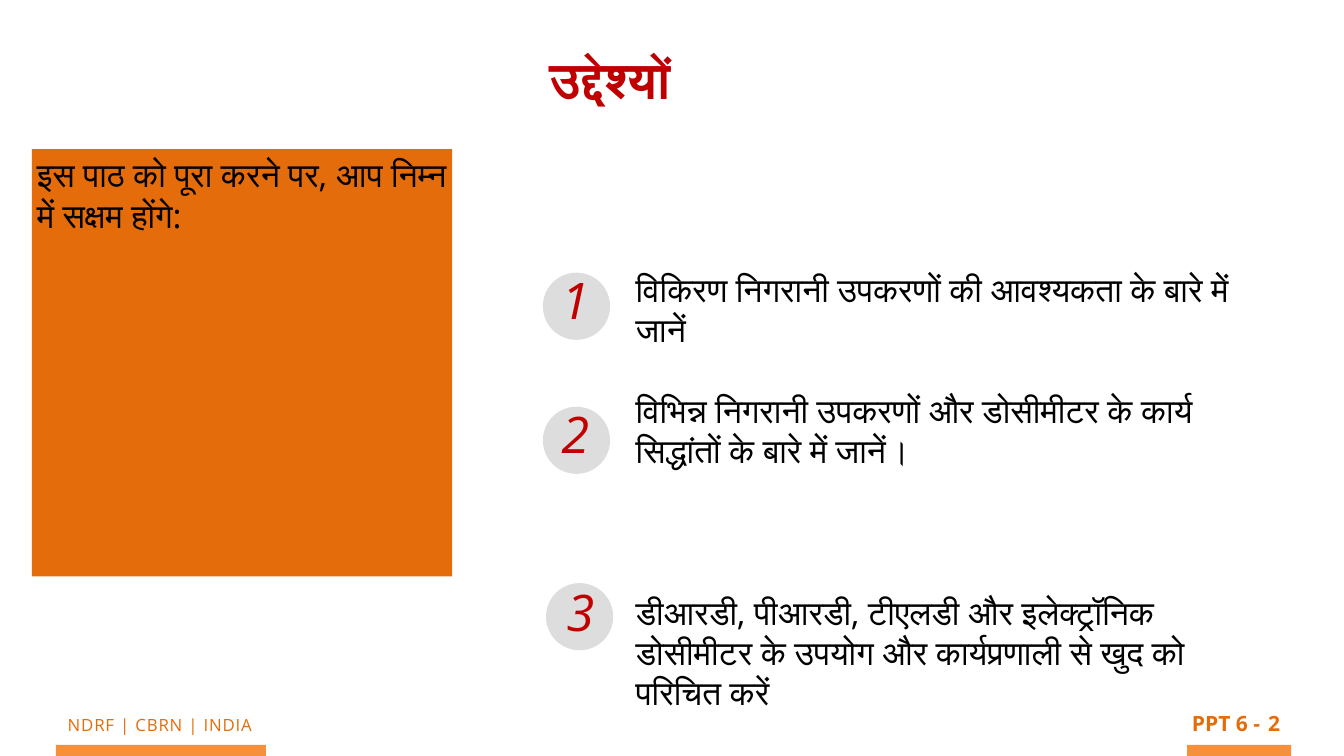
"""Build the lesson objectives slide with three numbered goals."""
from pptx import Presentation
from pptx.dml.color import RGBColor
from pptx.enum.shapes import MSO_SHAPE
from pptx.enum.text import MSO_ANCHOR, MSO_AUTO_SIZE, PP_ALIGN
from pptx.util import Pt

COLORS = {
    "orange": "E46C0A",
    "bar": "F7903B",
    "red": "C00000",
    "disc": "DDDDDD",
    "black": "000000",
}
FONT = "Open Sans"


def add_filled(shapes, kind, left, top, width, height, color):
    shape = shapes.add_shape(kind, Pt(left), Pt(top), Pt(width), Pt(height))
    shape.shadow.inherit = False
    shape.fill.solid()
    shape.fill.fore_color.rgb = RGBColor.from_string(COLORS[color])
    shape.line.fill.background()
    return shape


def write(box, texts, size, color, align=PP_ALIGN.LEFT, bold=False,
          italic=False, gaps=(0,), inset=6.5, wrap=True):
    frame = box.text_frame
    frame.word_wrap = wrap
    frame.auto_size = MSO_AUTO_SIZE.NONE
    frame.vertical_anchor = MSO_ANCHOR.TOP
    frame.margin_left = frame.margin_right = Pt(inset)
    frame.margin_top = frame.margin_bottom = Pt(inset)
    for index, (text, gap) in enumerate(zip(texts, gaps)):
        para = frame.add_paragraph() if index else frame.paragraphs[0]
        para.alignment = align
        para.space_before = Pt(gap)
        span = para.add_run()
        span.text = text
        span.font.name = FONT
        span.font.size = Pt(size)
        span.font.bold = bold
        span.font.italic = italic
        span.font.color.rgb = RGBColor.from_string(COLORS[color])
    return span


deck = Presentation()
deck.slide_width = Pt(1920)
deck.slide_height = Pt(1080)
page = deck.slides.add_slide(deck.slide_layouts[5])
shapes = page.shapes

title = shapes.title
title.left, title.top, title.width, title.height = Pt(682), Pt(62), Pt(379.5), Pt(99.5)
write(title, ["उद्देश्यों"], 72, "red", PP_ALIGN.CENTER, bold=True)

for left, width in [(80, 300), (1696, 148.5)]:
    add_filled(shapes, MSO_SHAPE.RECTANGLE, left, 1064, width, 16, "bar")

footer = shapes.add_textbox(Pt(45.5), Pt(1014), Pt(366), Pt(42))
credit = write(footer, ["NDRF | CBRN | INDIA"], 24, "orange", PP_ALIGN.CENTER)
credit.font._element.set("spc", "120")

for text, left, width, wrap in [("PPT 6 -", 1696, 111, False), ("2", 1805, 30.5, True)]:
    marker = shapes.add_textbox(Pt(left), Pt(1008.5), Pt(width), Pt(51))
    write(marker, [text], 30, "orange", PP_ALIGN.CENTER, bold=True, wrap=wrap)

intro = add_filled(shapes, MSO_SHAPE.RECTANGLE, 45.5, 213, 600.5, 610.5, "orange")
write(intro, ["इस पाठ को पूरा करने पर, आप निम्न में सक्षम होंगे:"], 48, "black", inset=7.2)

goals = [
    "विकिरण निगरानी उपकरणों की आवश्यकता के बारे में जानें",
    "विभिन्न निगरानी उपकरणों और डोसीमीटर के कार्य सिद्धांतों के बारे में जानें।",
    "डीआरडी, पीआरडी, टीएलडी और इलेक्ट्रॉनिक डोसीमीटर के उपयोग और कार्यप्रणाली से खुद को परिचित करें",
]
goal_box = shapes.add_textbox(Pt(901.5), Pt(377.5), Pt(903), Pt(652))
write(goal_box, goals, 48, "black", gaps=(0, 58, 173))

badges = [(775.5, 389.5, 20, -12), (775.5, 581, 20, -12), (780, 833, 23, -9.5)]
for number, (left, top, shift, lift) in enumerate(badges, 1):
    badge = shapes.add_group_shape()
    add_filled(badge.shapes, MSO_SHAPE.OVAL, left, top, 96, 96, "disc")
    digit = badge.shapes.add_textbox(Pt(left + shift), Pt(top + lift), Pt(65), Pt(132.5))
    write(digit, [str(number)], 72, "red", italic=True)

deck.save("out.pptx")
